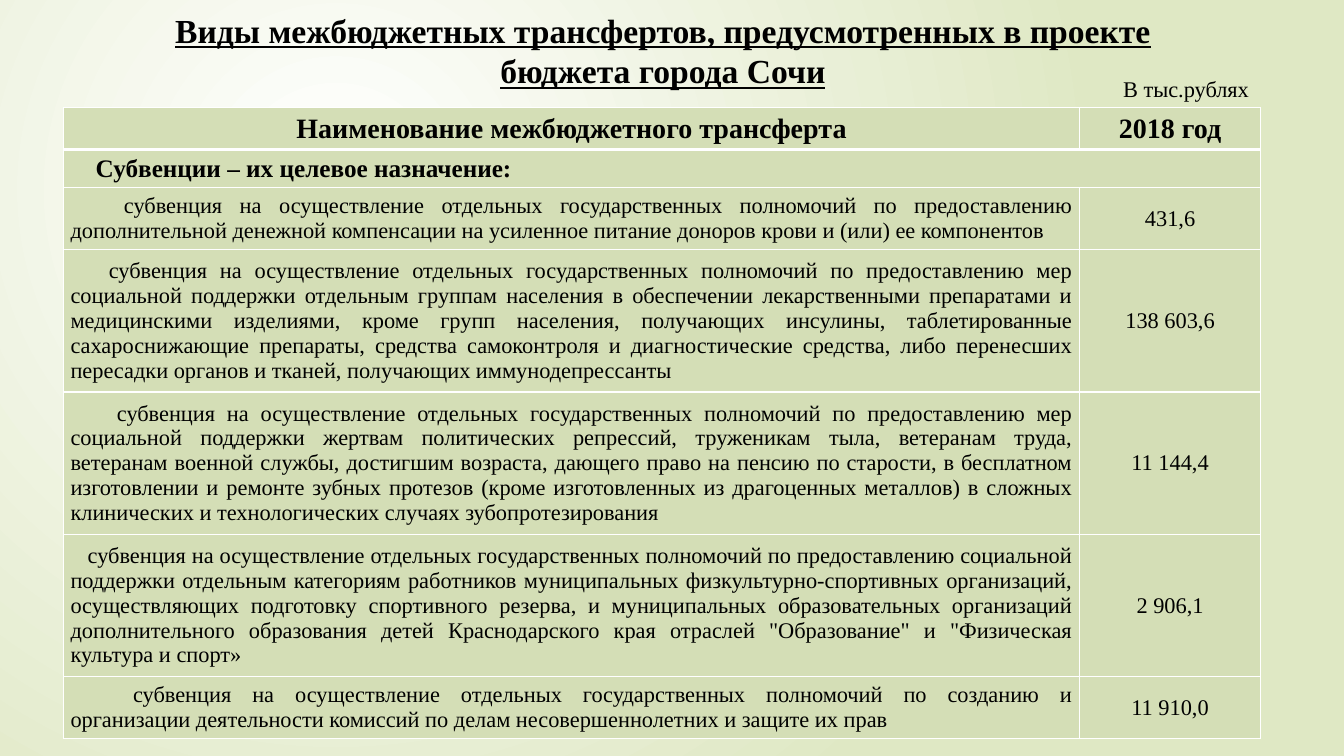
from pptx import Presentation
from pptx.dml.color import RGBColor
from pptx.enum import text
from pptx.oxml import parse_xml
from pptx.oxml.ns import nsdecls, qn
from pptx.util import Inches, Pt

BLACK = RGBColor(0x00, 0x00, 0x00)
WHITE = RGBColor(0xFF, 0xFF, 0xFF)
GREEN = RGBColor(0xD4, 0xDE, 0xB6)
PALE = RGBColor(0xDF, 0xE8, 0xC4)
LEFT, MID, JUST = text.PP_ALIGN.LEFT, text.PP_ALIGN.CENTER, text.PP_ALIGN.JUSTIFY


def write(frame, words, size, align, **style):
    frame.word_wrap = True
    para = frame.paragraphs[0]
    para.text = words
    para.alignment = align
    para.font.color.rgb = BLACK
    for name, value in dict(name="Times New Roman", size=Pt(size), **style).items():
        for run in para.runs:
            setattr(run.font, name, value)
            run.font.color.rgb = BLACK
    return para


def edge(cell, side, width):
    line = parse_xml(
        f'<a:{side} {nsdecls("a")} w="{Pt(width)}"><a:solidFill>'
        f'<a:srgbClr val="{WHITE}"/></a:solidFill></a:{side}>')
    cell._tc.get_or_add_tcPr().append(line)


deck = Presentation()
deck.slide_width, deck.slide_height = Inches(13.33), Inches(7.5)
slide = deck.slides.add_slide(deck.slide_layouts[6])

# Background: circular gradient
fill = slide.background.fill
fill.gradient()
for stop, color in zip(fill.gradient_stops, (WHITE, PALE)):
    stop.color.rgb = color
grad = slide.element.find(".//" + qn("a:gradFill"))
grad.replace(grad.find(qn("a:lin")), parse_xml(
    f'<a:path {nsdecls("a")} path="circle"><a:fillToRect l="50000" t="50000" '
    'r="100000" b="100000"/></a:path>'))

# Title and unit note
title = slide.shapes.add_textbox(Inches(1.29), Inches(0.05), Inches(10.57), Inches(0.91))
write(title.text_frame,
      "Виды межбюджетных трансфертов, предусмотренных в проекте бюджета города Сочи",
      24, MID, bold=True, underline=True)
unit = slide.shapes.add_textbox(Inches(11.04), Inches(0.7), Inches(1.81), Inches(0.37))
write(unit.text_frame, "В тыс.рублях", 16, LEFT)

# Table rows: height, first-line indent, name, amount
LEAD = "субвенция на осуществление отдельных государственных полномочий по "
rows = [
    (0.4, 0, "Наименование межбюджетного трансферта", "2018 год"),
    (0.37, 0.25, "Субвенции – их целевое назначение:", ""),
    (0.61, 0.53, LEAD + "предоставлению дополнительной денежной компенсации на "
     "усиленное питание доноров крови и (или) ее компонентов", "431,6"),
    (1.41, 0.38, LEAD + "предоставлению мер социальной поддержки отдельным группам "
     "населения в обеспечении лекарственными препаратами и медицинскими изделиями, "
     "кроме групп населения, получающих инсулины, таблетированные сахароснижающие "
     "препараты, средства самоконтроля и диагностические средства, либо перенесших "
     "пересадки органов и тканей, получающих иммунодепрессанты", "138 603,6"),
    (1.41, 0.46, LEAD + "предоставлению мер социальной поддержки жертвам политических "
     "репрессий, труженикам тыла, ветеранам труда, ветеранам военной службы, достигшим "
     "возраста, дающего право на пенсию по старости, в бесплатном изготовлении и ремонте "
     "зубных протезов (кроме изготовленных из драгоценных металлов) в сложных "
     "клинических и технологических случаях зубопротезирования", "11 144,4"),
    (1.41, 0.17, LEAD + "предоставлению социальной поддержки отдельным категориям "
     "работников муниципальных физкультурно-спортивных организаций, осуществляющих "
     "подготовку спортивного резерва, и муниципальных образовательных организаций "
     "дополнительного образования детей Краснодарского края отраслей \"Образование\" и "
     "\"Физическая культура и спорт»", "2 906,1"),
    (0.61, 0.62, LEAD + "созданию и\vорганизации деятельности комиссий по делам "
     "несовершеннолетних и защите их прав", "11 910,0"),
]
frame = slide.shapes.add_table(len(rows), 2, Inches(0.63), Inches(1.07),
                               Inches(11.87), Inches(6.22))
table = frame.table
for col, width in zip(table.columns, (10.08, 1.79)):
    col.width = Inches(width)
table.cell(1, 0).merge(table.cell(1, 1))

for r, (high, indent, *words) in enumerate(rows):
    table.rows[r].height = Inches(high)
    for c, word in enumerate(words):
        cell = table.cell(r, c)
        look = dict(margin_left=Inches(0.07), margin_right=Inches(0.07),
                    margin_top=Inches(0.04), margin_bottom=Inches(0.04),
                    vertical_anchor=text.MSO_ANCHOR.MIDDLE)
        for name, value in look.items():
            setattr(cell, name, value)
        for side, width in (("lnL", 1), ("lnR", 1), ("lnT", 3 if r == 1 else 1),
                            ("lnB", 3 if r == 0 else 1)):
            edge(cell, side, width)
        cell.fill.solid()
        cell.fill.fore_color.rgb = GREEN
        if word:
            size = (20, 18)[r] if r < 2 else 16
            align = JUST if r and c == 0 else MID
            para = write(cell.text_frame, word, size, align, bold=r < 2)
            if c == 0:
                para._p.get_or_add_pPr().set("indent", str(Inches(indent)))

deck.save("out.pptx")
